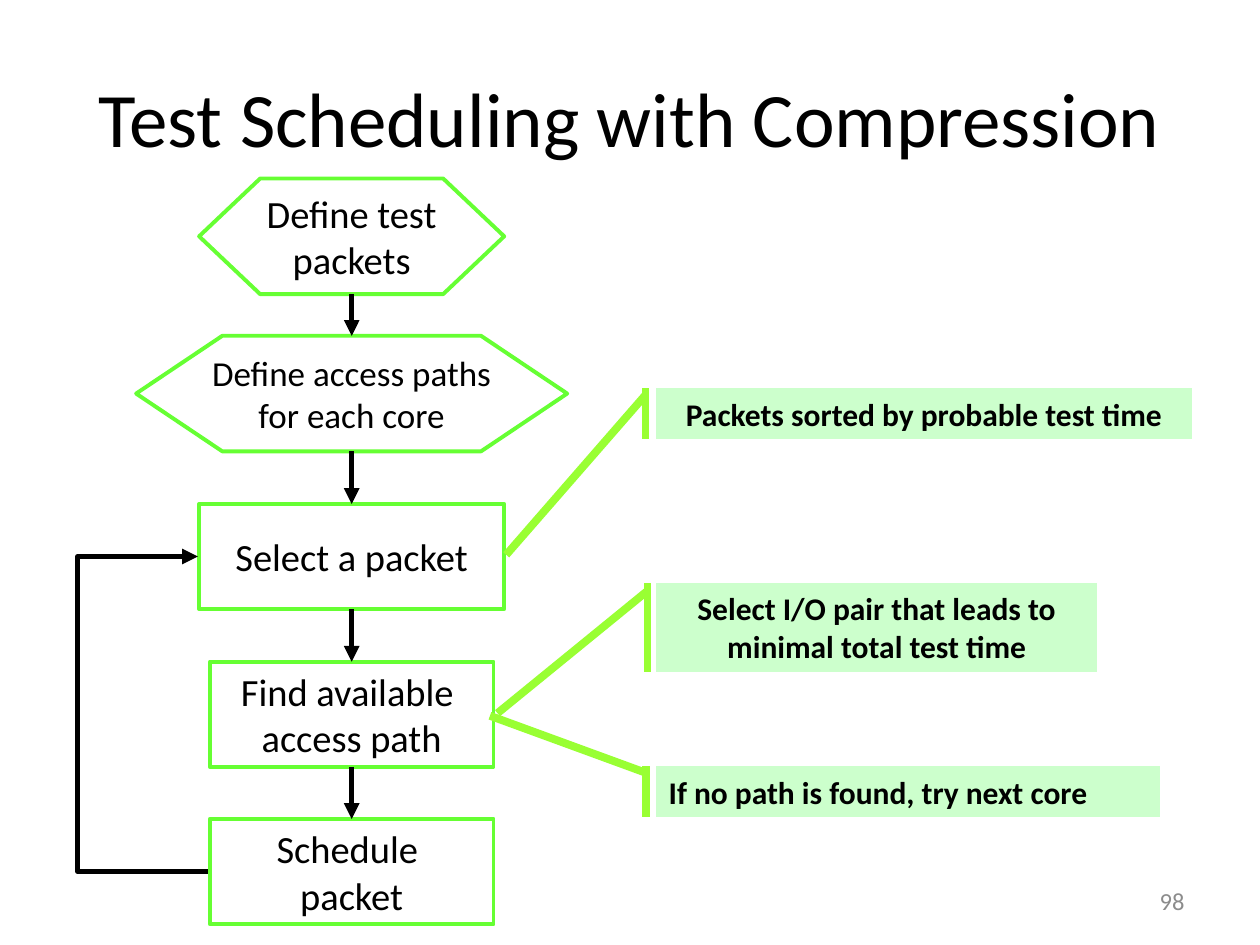
"""Build the flowchart slide on test scheduling with compression."""
from lxml import etree
from pptx import Presentation
from pptx.dml.color import RGBColor
from pptx.enum.shapes import MSO_CONNECTOR, MSO_SHAPE
from pptx.enum.text import MSO_ANCHOR, MSO_AUTO_SIZE, PP_ALIGN
from pptx.oxml.ns import qn
from pptx.util import Cm, Pt

PREPARATION = MSO_SHAPE.FLOWCHART_PREPARATION
PROCESS = MSO_SHAPE.FLOWCHART_PROCESS
CALLOUT = MSO_SHAPE.LINE_CALLOUT_1_ACCENT_BAR
STRAIGHT, ELBOW = MSO_CONNECTOR.STRAIGHT, MSO_CONNECTOR.ELBOW
TOP, MIDDLE = MSO_ANCHOR.TOP, MSO_ANCHOR.MIDDLE
LEFT, CENTER, RIGHT = PP_ALIGN.LEFT, PP_ALIGN.CENTER, PP_ALIGN.RIGHT
GROW = MSO_AUTO_SIZE.SHAPE_TO_FIT_TEXT


def rgb(value):
    """Turn a hex string into a colour."""
    return RGBColor.from_string(value)


def write(tf, lines, size, align, anchor, color="000000", bold=False):
    """Fill a text frame, one paragraph per line."""
    tf.vertical_anchor = anchor
    for i, line in enumerate(lines):
        p = tf.paragraphs[0] if i == 0 else tf.add_paragraph()
        p.alignment = align
        r = p.add_run()
        r.text = line
        r.font.name = "Calibri"
        r.font.size = Pt(size)
        r.font.bold = bold
        r.font.color.rgb = rgb(color)


prs = Presentation()
prs.slide_width, prs.slide_height = Cm(25.4), Cm(19.05)
s = prs.slides.add_slide(prs.slide_layouts[5])

title = s.shapes.title
title.left, title.top, title.width, title.height = Cm(1.27), Cm(0.76), Cm(22.86), Cm(3.18)
write(title.text_frame, ["Test Scheduling with Compression"], 44, CENTER, MIDDLE)

number = s.shapes.add_textbox(Cm(18.21), Cm(17.65), Cm(5.92), Cm(1.02))
number.text_frame.word_wrap = True
write(number.text_frame, ["98"], 14, RIGHT, MIDDLE, "8C8C8C")

axis = 7.09
steps = []
for kind, top, width, height, size, lines in [
    (PREPARATION, 3.6, 6.15, 2.33, 22, [" Define test ", "packets"]),
    (PREPARATION, 6.77, 8.69, 2.33, 20, [" Define access paths ", "for each core"]),
    (PROCESS, 10.16, 6.15, 2.12, 22, ["Select a packet"]),
    (PROCESS, 13.34, 5.72, 2.12, 22, ["Find available ", "access path"]),
    (PROCESS, 16.51, 5.72, 2.12, 22, ["Schedule ", "packet"]),
]:
    sp = s.shapes.add_shape(kind, Cm(axis - width / 2), Cm(top), Cm(width), Cm(height))
    sp.shadow.inherit = False
    sp.fill.background()
    sp.line.color.rgb = rgb("66FF33")
    sp.line.width = Pt(2.25)
    sp.text_frame.word_wrap = False
    write(sp.text_frame, lines, size, CENTER, MIDDLE)
    steps.append(sp)

arrows = []
for upper, lower in zip(steps, steps[1:]):
    arrow = s.shapes.add_connector(STRAIGHT, 0, 0, 0, 0)
    arrow.begin_connect(upper, 2)
    arrow.end_connect(lower, 0)
    arrows.append(arrow)

start, end, bend = 4.19, 3.99, 1.57
loop = s.shapes.add_connector(ELBOW, Cm(start), Cm(17.57), Cm(end), Cm(11.22))
guides = loop._element.spPr.find(qn("a:prstGeom")).get_or_add_avLst()
ratio = round((start - bend) / (start - end) * 100000)
etree.SubElement(guides, qn("a:gd"), name="adj1", fmla=f"val {ratio}")

for arrow in arrows + [loop]:
    arrow.line.color.rgb = rgb("000000")
    arrow.line.width = Pt(3)
    etree.SubElement(arrow.line._get_or_add_ln(), qn("a:tailEnd"), type="triangle")
    etree.SubElement(arrow._element.spPr, qn("a:effectLst"))

for top, width, height, align, adjustments, text in [
    (15.45, 10.16, 1.02, LEFT, (0.13, -0.02, -1, -0.33),
     "If no path is found, try next core"),
    (11.75, 8.89, 1.8, CENTER, (0.09, -0.02, 1.46, -0.36),
     "Select I/O pair that leads to minimal total test time"),
    (7.83, 10.8, 1.02, CENTER, (0.13, -0.02, 3.29, -0.28),
     "Packets sorted by probable test time"),
]:
    sp = s.shapes.add_shape(CALLOUT, Cm(13.23), Cm(top), Cm(width), Cm(height))
    for i, value in enumerate(adjustments):
        sp.adjustments[i] = value
    sp.shadow.inherit = False
    sp.fill.solid()
    sp.fill.fore_color.rgb = rgb("CCFFCC")
    sp.line.color.rgb = rgb("99FF33")
    sp.line.width = Pt(4.5)
    sp.text_frame.word_wrap = True
    sp.text_frame.auto_size = GROW
    write(sp.text_frame, [text], 18, align, TOP, bold=True)

prs.save("out.pptx")
